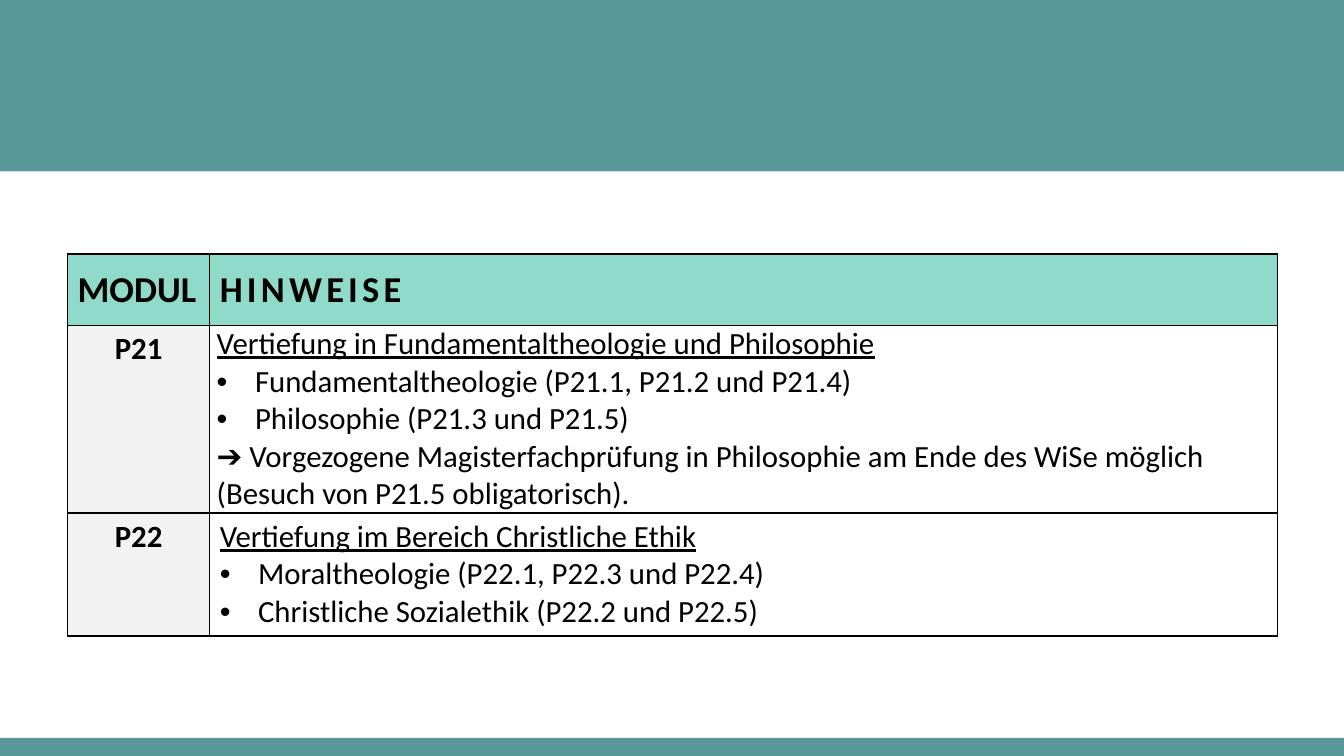
from lxml import etree
from pptx import Presentation
from pptx.dml.color import RGBColor
from pptx.enum.shapes import MSO_SHAPE
from pptx.enum.text import MSO_ANCHOR, PP_ALIGN
from pptx.oxml import parse_xml
from pptx.oxml.ns import nsdecls, qn
from pptx.util import Inches, Pt


def color(hex_value):
    return RGBColor.from_string(hex_value)


def add_text(p, text, size=22, bold=False, underline=False):
    r = p.add_run()
    r.text = text
    r.font.name = "Calibri"
    r.font.size = Pt(size)
    r.font.bold = bold
    r.font.underline = underline
    r.font.color.rgb = color("000000")
    return r


prs = Presentation()
prs.slide_width, prs.slide_height = Inches(13.33), Inches(7.5)
s = prs.slides.add_slide(prs.slide_layouts[6])

for top, height in [(0, 1.7), (7.32, 0.18)]:
    sp = s.shapes.add_shape(MSO_SHAPE.RECTANGLE, 0, Inches(top), prs.slide_width, Inches(height))
    sp.shadow.inherit = False
    sp.fill.solid()
    sp.fill.fore_color.rgb = color("589898")
    sp.line.fill.background()

col_widths = [1.41, 10.59]
row_heights = [0.71, 1.86, 1.22]
modules = [
    ("P21", [
        ("title", "Vertiefung in Fundamentaltheologie und Philosophie"),
        ("bullet", "Fundamentaltheologie (P21.1, P21.2 und P21.4)"),
        ("bullet", "Philosophie (P21.3 und P21.5)"),
        ("note", "➔ Vorgezogene Magisterfachprüfung in Philosophie am Ende des WiSe möglich "
                 "(Besuch von P21.5 obligatorisch)."),
    ]),
    ("P22", [
        ("title", "Vertiefung im Bereich Christliche Ethik"),
        ("bullet", "Moraltheologie (P22.1, P22.3 und P22.4)"),
        ("bullet", "Christliche Sozialethik (P22.2 und P22.5)"),
    ]),
]

table = s.shapes.add_table(3, 2, Inches(0.67), Inches(2.52),
                           Inches(sum(col_widths)), Inches(sum(row_heights))).table
table.horz_banding = False
for column, width in zip(table.columns, col_widths):
    column.width = Inches(width)
for row, height in zip(table.rows, row_heights):
    row.height = Inches(height)

for cell in table.iter_cells():
    tcPr = cell._tc.get_or_add_tcPr()
    for side in ("lnL", "lnR", "lnT", "lnB"):
        tcPr.append(parse_xml(
            f'<a:{side} {nsdecls("a")} w="{Pt(1)}"><a:solidFill>'
            f'<a:srgbClr val="000000"/></a:solidFill></a:{side}>'))
    cell.fill.background()

for col, heading in enumerate(["MODUL", "HINWEISE"]):
    cell = table.cell(0, col)
    cell.fill.solid()
    cell.fill.fore_color.rgb = color("8FDAC8")
    cell.vertical_anchor = MSO_ANCHOR.MIDDLE
    r = add_text(cell.text_frame.paragraphs[0], heading, 26, bold=True)
    if heading == "HINWEISE":
        r.font._element.set("spc", "300")

for row, (module, notes) in enumerate(modules, start=1):
    cell = table.cell(row, 0)
    cell.fill.solid()
    cell.fill.fore_color.rgb = color("F2F2F2")
    p = cell.text_frame.paragraphs[0]
    p.alignment = PP_ALIGN.CENTER
    add_text(p, module, bold=True)

    tf = table.cell(row, 1).text_frame
    for i, (kind, text) in enumerate(notes):
        p = tf.add_paragraph() if i else tf.paragraphs[0]
        if kind == "bullet":
            pPr = p._p.get_or_add_pPr()
            pPr.set("marL", str(Inches(0.38)))
            pPr.set("indent", str(-Inches(0.38)))
            etree.SubElement(pPr, qn("a:buFont")).set("typeface", "Arial")
            etree.SubElement(pPr, qn("a:buChar")).set("char", "•")
        add_text(p, text, underline=kind == "title")

cell = table.cell(1, 1)
cell.margin_left = cell.margin_right = Inches(0.07)
cell.margin_top = cell.margin_bottom = 0

prs.save("out.pptx")
